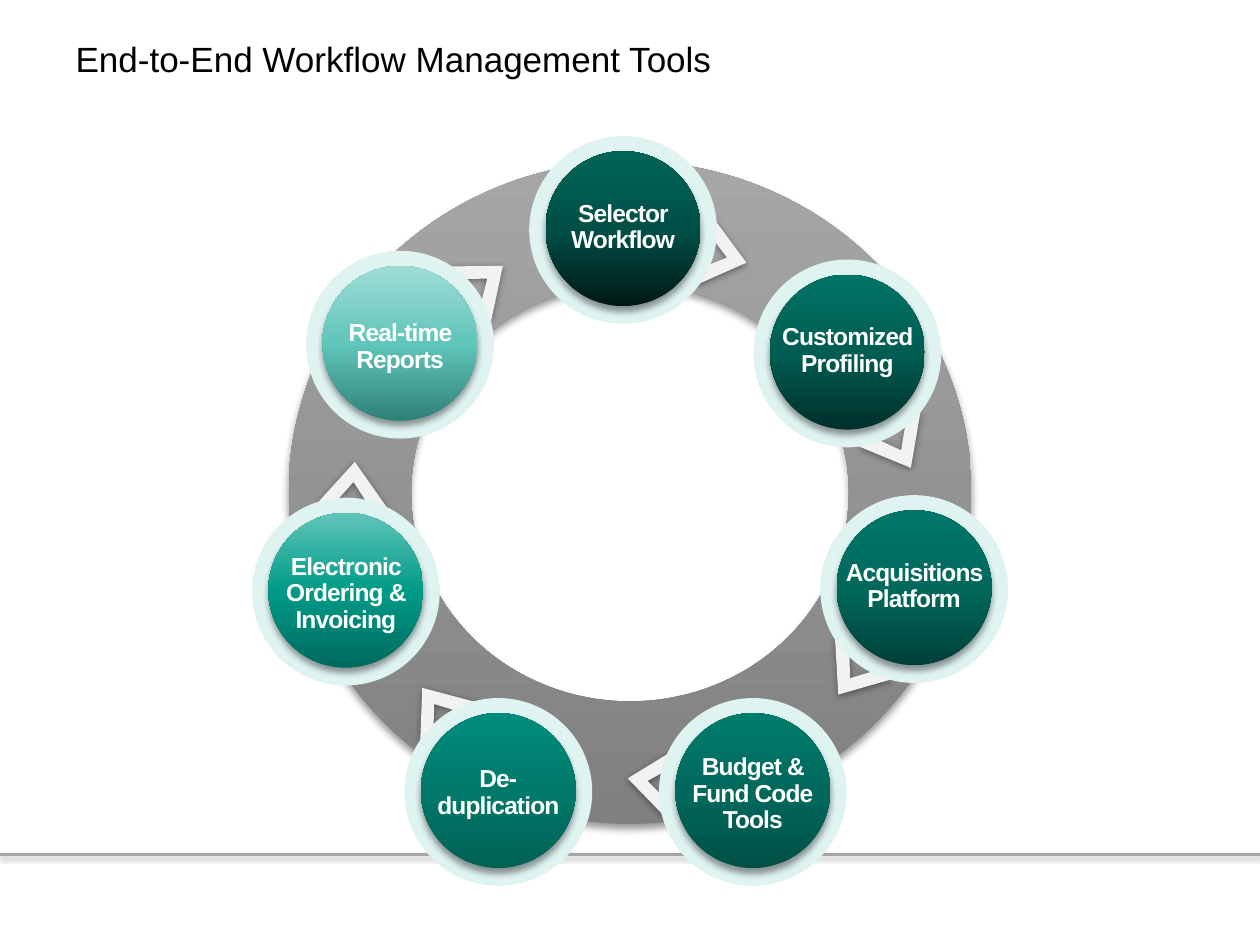
import dataclasses
import typing

import pptx
import pptx.dml.color
import pptx.enum.shapes
import pptx.enum.text
import pptx.oxml.ns
import pptx.oxml.xmlchemy
import pptx.util
from lxml import etree

Inches = pptx.util.Inches
Pt = pptx.util.Pt
KIND = pptx.enum.shapes.MSO_SHAPE
ALIGN = pptx.enum.text.PP_ALIGN
MIDDLE = pptx.enum.text.MSO_ANCHOR.MIDDLE
qn = pptx.oxml.ns.qn

HALO = 1.49
DISC = 1.23
INSET_X, INSET_Y = 0.13, 0.12
WIDE, HIGH = 0.35, 0.56
# Arrow outline pointing left, inside a WIDE x HIGH box
ARROW = [(0.35, 0.43), (0.16, 0.28), (0.35, 0.14),
         (0.35, 0), (0, 0.28), (0.35, 0.56)]


@dataclasses.dataclass
class Step:
    label: str          # "|" parts paragraphs, a newline breaks a line
    left: float         # halo corner
    top: float
    tones: tuple        # disc gradient, bottom to top
    text_top: float
    text_wide: float
    rows: int
    arrow: tuple        # left, top, rotation


STEPS = [
    Step("Selector Workflow", 4.2, 1.08, ("001815", "005047", "006458"),
         1.54, 1.27, 2, (5.58, 1.76, 194.7)),
    Step("Acquisitions Platform", 6.51, 3.93, ("004039", "00695C", "007668"),
         4.39, 1.38, 2, (6.58, 5.09, 305.3)),
    Step("Budget & Fund Code\nTools", 5.23, 5.54, ("005047", "00695C", "007C6D"),
         5.94, 1.2, 3, (4.98, 5.92, 7.2)),
    Step("De-|duplication", 3.21, 5.54, ("006155", "00796A", "008C7C"),
         6.03, 1.6, 2, (3.28, 5.32, 53.5)),
    Step("Electronic Ordering & Invoicing", 2, 3.95, ("006A5E", "009B88", "60C5BA"),
         4.35, 1.32, 3, (2.63, 3.56, 93.6)),
    Step("Real-time Reports", 2.43, 1.99, ("2F8178", "60C5BA", "A0DCD6"),
         2.49, 1.2, 2, (3.68, 1.94, 140.6)),
    Step("Customized Profiling", 5.98, 2.06, ("00302B", "005D52", "007466"),
         2.52, 1.27, 2, (6.97, 3.28, 241)),
]


def color(code: str) -> pptx.dml.color.RGBColor:
    return pptx.dml.color.RGBColor.from_string(code)


def shade(shape: typing.Any, blur: float, dist: float, alpha: int = 40) -> None:
    """Give a shape or connector a black shadow falling straight down."""
    props = shape._element.spPr
    for old in props.findall(qn("a:effectLst")):
        props.remove(old)
    glow = etree.SubElement(props, qn("a:effectLst"))
    drop = etree.SubElement(glow, qn("a:outerShdw"), blurRad=str(int(Pt(blur))),
                            dist=str(int(Pt(dist))), dir="5400000", rotWithShape="0")
    tint = etree.SubElement(drop, qn("a:srgbClr"), val="000000")
    etree.SubElement(tint, qn("a:alpha"), val=str(alpha * 1000))


def paint(shape: typing.Any, tones: tuple) -> None:
    """Fill with one color, or with a gradient running from bottom to top."""
    shape.shadow.inherit = False
    shape.line.fill.background()
    if len(tones) == 1:
        shape.fill.solid()
        shape.fill.fore_color.rgb = color(tones[0])
        return
    shape.fill.gradient()
    shape.fill.gradient_angle = 90
    stops = next(shape._element.spPr.iter(qn("a:gsLst")))
    for old in list(stops):
        stops.remove(old)
    for n, tone in enumerate(tones):
        spot = 100000 * n // (len(tones) - 1)
        stop = etree.SubElement(stops, qn("a:gs"), pos=str(spot))
        etree.SubElement(stop, qn("a:srgbClr"), val=tone)


def add_form(slide: typing.Any, kind: typing.Any, box: tuple, tones: tuple) -> typing.Any:
    shape = slide.shapes.add_shape(kind, *map(Inches, box))
    paint(shape, tones)
    return shape


def add_arrow(slide: typing.Any, left: float, top: float, turn: float) -> None:
    spots = [(Inches(left + x), Inches(top + y)) for x, y in ARROW]
    pen = slide.shapes.build_freeform(*spots[0])
    pen.add_line_segments(spots[1:], close=True)
    shape = pen.convert_to_shape()
    shape.rotation = turn
    paint(shape, ("F2F2F2",))
    shade(shape, 4, 1)


def add_run(para: typing.Any, text: str, size: int, tone: str, bold: bool) -> typing.Any:
    run = para.add_run()
    run.text = text
    run.font.name = "Arial"
    run.font.size = Pt(size)
    run.font.bold = bold
    run.font.color.rgb = color(tone)
    return run


def add_label(slide: typing.Any, step: Step) -> None:
    mid = step.left + INSET_X + DISC / 2
    box = (mid - step.text_wide / 2, step.text_top,
           step.text_wide, 0.13 + 0.2 * step.rows)
    frame = slide.shapes.add_textbox(*map(Inches, box)).text_frame
    frame.word_wrap = True
    frame.vertical_anchor = MIDDLE
    frame.auto_size = pptx.enum.text.MSO_AUTO_SIZE.SHAPE_TO_FIT_TEXT
    for n, part in enumerate(step.label.split("|")):
        para = frame.add_paragraph() if n else frame.paragraphs[0]
        para.alignment = ALIGN.CENTER
        para.line_spacing = 0.9
        for row, text in enumerate(part.split("\n")):
            if row:
                para.add_line_break()
            run = add_run(para, text, 14, "FFFFFF", True)
            run.font._element.set("spc", "-50")


def add_step(slide: typing.Any, step: Step) -> None:
    add_arrow(slide, *step.arrow)
    add_form(slide, KIND.OVAL, (step.left, step.top, HALO, HALO), ("DFF3F1",))
    disc = add_form(slide, KIND.OVAL,
                    (step.left + INSET_X, step.top + INSET_Y, DISC, DISC), step.tones)
    shade(disc, 4, 3)
    add_label(slide, step)


def main() -> None:
    deck = pptx.Presentation()
    deck.slide_width, deck.slide_height = Inches(10), Inches(7.5)
    slide = deck.slides.add_slide(deck.slide_layouts[5])

    # Title
    title = slide.shapes.title
    title.left, title.top = Inches(0.5), Inches(0)
    title.width, title.height = Inches(7.77), Inches(0.93)
    frame = title.text_frame
    frame.auto_size = pptx.enum.text.MSO_AUTO_SIZE.NONE
    frame.vertical_anchor = MIDDLE
    frame.paragraphs[0].alignment = ALIGN.LEFT
    add_run(frame.paragraphs[0], "End-to-End Workflow Management Tools",
            20, "000000", False)

    # Footer rule
    rule = slide.shapes.add_connector(
        pptx.enum.shapes.MSO_CONNECTOR.STRAIGHT,
        Inches(0), Inches(6.78), Inches(10), Inches(6.78))
    rule.line.color.rgb = color("A6A6A6")
    rule.line.width = Pt(1.5)
    shade(rule, 3.1, 1.6, 38)

    # Ring
    ring = add_form(slide, KIND.DONUT, (2.29, 1.28, 5.42, 5.26), ("808080", "A6A6A6"))
    ring.adjustments[0] = 0.185
    shade(ring, 4, 3)

    # Workflow steps
    for step in STEPS:
        add_step(slide, step)

    deck.save("out.pptx")


if __name__ == "__main__":
    main()
